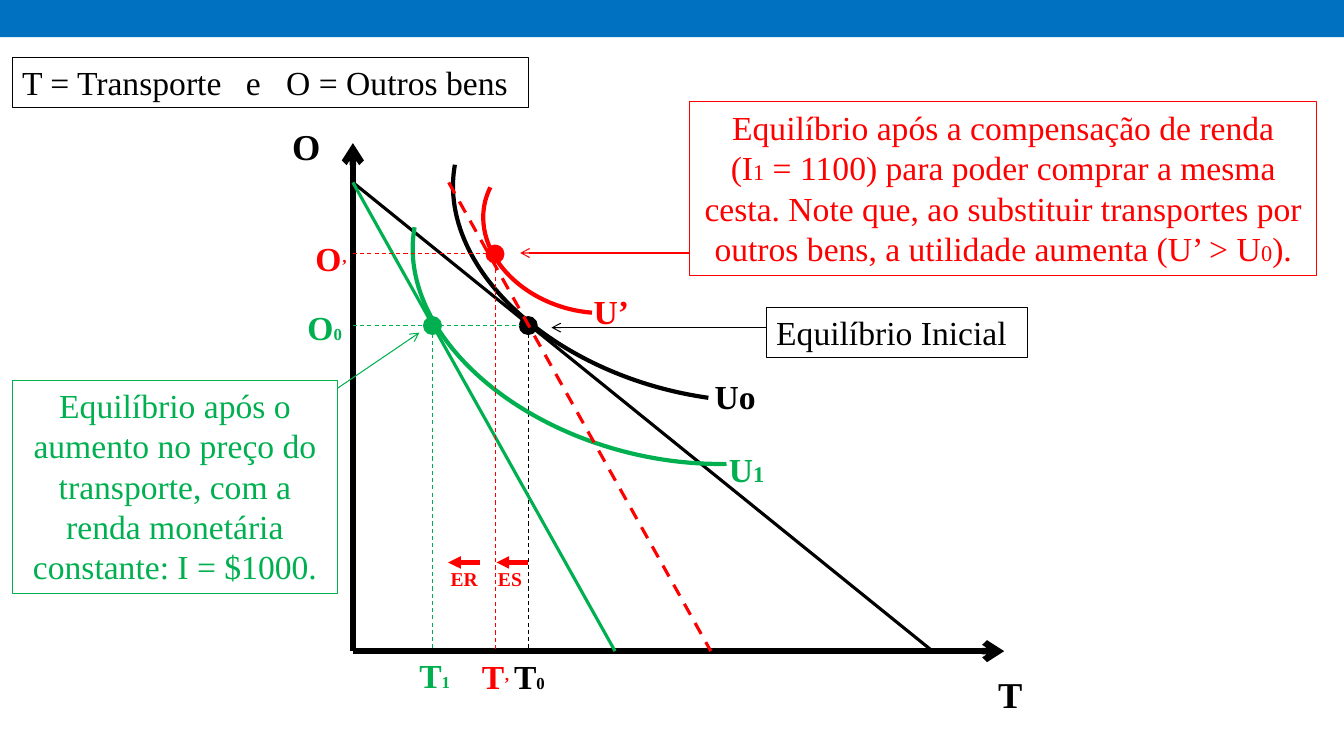
from dataclasses import dataclass
from typing import Any

from lxml import etree
from pptx import Presentation
from pptx import util as u
from pptx.dml.color import RGBColor
from pptx.enum import dml, shapes, text
from pptx.oxml.ns import qn

UNIT = 0.1
FONT = "Times New Roman"
BLUE, BLACK, GREEN, RED = "0070C0", "000000", "00B050", "FF0000"
PLOT = (35, 14.2, 64.6, 50.4)
INTERCEPT = 3.9
T_INITIAL, T_PRICE, T_COMPENSATED = 17.4, 7.9, 14.1
O_INITIAL, O_COMPENSATED = 18.1, 11


def grid(count):
    """Turn a count of grid cells into a length."""
    return u.Inches(count * UNIT)


def paint(target, color):
    """Apply a hex colour to a fill or a font."""
    if hasattr(target, "solid"):
        target.solid()
        target.fore_color.rgb = RGBColor.from_string(color)
    else:
        target.color.rgb = RGBColor.from_string(color)


@dataclass
class Region:
    """Draw parts of one colour, placed in grid cells from a box corner."""

    shapes: Any
    box: tuple
    color: str

    def place(self, x, y):
        """Give the slide position of a point in the region."""
        return grid(self.box[0] + x), grid(self.box[1] + y)

    def line(self, start, end, width=0.75, dashed=False, arrow=None):
        """Draw a straight line, dashed or with an arrowhead if asked."""
        connector = self.shapes.add_connector(
            shapes.MSO_CONNECTOR.STRAIGHT, *self.place(*start), *self.place(*end))
        paint(connector.line.fill, self.color)
        connector.line.width = u.Pt(width)
        if dashed:
            connector.line.dash_style = dml.MSO_LINE.DASH
        properties = connector._element.spPr
        if arrow:
            outline = properties.find(qn("a:ln"))
            etree.SubElement(outline, qn("a:tailEnd"), type=arrow)
        etree.SubElement(properties, qn("a:effectLst"))

    def outline(self, kind, corner, size, width, filled=False):
        """Add an outlined preset shape."""
        shape = self.shapes.add_shape(kind, *self.place(*corner), *map(grid, size))
        shape.shadow.inherit = False
        if filled:
            paint(shape.fill, self.color)
        else:
            shape.fill.background()
        paint(shape.line.fill, self.color)
        shape.line.width = u.Pt(width)
        return shape

    def curve(self, corner, size, start, end):
        """Draw an indifference curve as a turned arc."""
        arc = self.outline(shapes.MSO_SHAPE.ARC, corner, size, 3)
        arc.adjustments[0], arc.adjustments[1] = start, end
        arc.rotation = 194

    def equilibrium(self, x, y):
        """Mark a tangency point and drop its dashed line to the axis."""
        radius = 0.8
        self.outline(shapes.MSO_SHAPE.OVAL, (x - radius, y - radius),
                     (2 * radius, 2 * radius), 2, filled=True)
        self.line((x, y + radius), (x, self.box[3]), dashed=True)

    def set_text(self, shape, runs, bold=False, centered=False, tabs=()):
        """Fill a shape with one paragraph of (text, size) runs."""
        frame = shape.text_frame
        frame.word_wrap = True
        frame.auto_size = text.MSO_AUTO_SIZE.SHAPE_TO_FIT_TEXT
        frame.vertical_anchor = text.MSO_ANCHOR.TOP
        paragraph = frame.paragraphs[0]
        paragraph.alignment = text.PP_ALIGN.CENTER if centered else text.PP_ALIGN.LEFT
        if tabs:
            stops = etree.SubElement(paragraph._p.get_or_add_pPr(), qn("a:tabLst"))
            for tab in tabs:
                etree.SubElement(stops, qn("a:tab"), pos=str(grid(tab)), algn="l")
        for words, size in runs:
            if words == "\n":
                paragraph.add_line_break()
                continue
            run = paragraph.add_run()
            run.text = words
            run.font.name, run.font.size, run.font.bold = FONT, u.Pt(size), bold
            paint(run.font, self.color)

    def label(self, corner, *runs, size=(5.5, 4)):
        """Add a bold label."""
        shape = self.shapes.add_textbox(*self.place(*corner), *map(grid, size))
        self.set_text(shape, runs, bold=True)

    def note(self, corner, size, *runs, centered=False, tabs=()):
        """Add a framed note."""
        shape = self.outline(shapes.MSO_SHAPE.RECTANGLE, corner, size, 0.75)
        self.set_text(shape, runs, centered=centered, tabs=tabs)


def draw_header(slide, box):
    """Draw the top band and the legend of the two goods."""
    band = Region(slide.shapes, box, BLUE)
    shape = band.outline(shapes.MSO_SHAPE.RECTANGLE, (0, 0), (box[2], 3.7), 0, filled=True)
    shape.line.fill.background()
    Region(slide.shapes, box, BLACK).note(
        (1.2, 5.7), (51.2, 5), ("T = Transporte\te\tO = Outros bens", 24), tabs=(22.2, 26.2))


def draw_initial(slide, box):
    """Draw the axes and the initial equilibrium."""
    region = Region(slide.shapes, box, BLACK)
    width, base = box[2:]
    for end in ((0, 0), (width, base)):
        region.line((0, base), end, 4.5, arrow="arrow")
    region.label((63, 52), ("T", 26), size=(5.5, 5.4))
    region.label((-7, -2.4), ("O", 26), size=(5.5, 5.4))
    region.line((0, INTERCEPT), (57.5, base), 2.25)
    region.curve((9.5, -9.6), (51.9, 34.6), 153.98, 215.03)
    region.label((34.9, 22.6), ("Uo", 24), size=(7.1, 4))
    region.equilibrium(T_INITIAL, O_INITIAL)
    region.label((15, base), ("T", 24), ("0", 12))
    region.note((41, 16.3), (25.9, 5), ("Equilíbrio Inicial", 24))
    region.line((41, 18.3), (19.7, 18.3), arrow="arrow")


def draw_price_rise(slide, box):
    """Draw the equilibrium after the price of transport rises."""
    region = Region(slide.shapes.add_group_shape().shapes, box, GREEN)
    base = box[3]
    region.label((36.3, 29.8), ("U", 24), ("1", 16), size=(7.1, 5))
    region.label((5.6, base - 0.1), ("T", 24), ("1", 12))
    region.note((-33.8, 23.5), (32.3, 21.2),
                ("Equilíbrio após o aumento no preço do transporte, com a renda "
                 "monetária constante: I = $1000.", 24), centered=True)
    region.line((0, INTERCEPT), (26, base), 2.25)
    region.line((0, O_INITIAL), (T_INITIAL - 0.8, O_INITIAL), dashed=True)
    region.label((-5.5, 15.8), ("O", 24), ("0", 12))
    region.equilibrium(T_PRICE, O_INITIAL)
    region.curve((5.5, -3.4), (51.9, 34.6), 143.18, 215.03)
    region.line((-1.5, 24.3), (6.6, 18.8), arrow="arrow")


def draw_compensation(slide, box):
    """Draw the compensated equilibrium and the two effects."""
    region = Region(slide.shapes.add_group_shape().shapes, box, RED)
    base = box[3]
    region.line((9.5, INTERCEPT), (35.5, base), 2.25, dashed=True)
    region.curve((12.8, 0), (21.4, 16.7), 152.76, 4.75)
    region.equilibrium(T_COMPENSATED, O_COMPENSATED)
    region.label((22.9, 14.2), ("U’", 24), size=(7.1, 4))
    region.line((0, O_COMPENSATED), (T_COMPENSATED - 0.8, O_COMPENSATED), dashed=True)
    region.label((-4.7, 8.9), ("O", 24), ("’", 12))
    region.label((11.8, base), ("T", 24), ("’", 12), size=(6.1, 5))
    region.note((33.4, -4.1), (62.2, 17.2),
                ("Equilíbrio após a compensação de renda", 24), ("\n", 24),
                ("(I", 24), ("1", 16),
                (" = 1100) para poder comprar a mesma cesta. Note que, ao substituir "
                 "transportes por outros bens, a utilidade aumenta (U’ > U", 24),
                ("0", 16), (").", 24), centered=True)
    region.line((33.4, 10.9), (16.6, 10.9), arrow="arrow")
    for name, start, left in (("ES", T_INITIAL, 13.4), ("ER", 12.6, 8.7)):
        region.line((start, 41.6), (start - 3.15, 41.6), 3, arrow="triangle")
        region.label((left, 41.6), (name, 14), size=(5.5, 3.4))


def main():
    """Build the slide and save it."""
    presentation = Presentation()
    presentation.slide_width, presentation.slide_height = u.Inches(13.33), u.Inches(7.5)
    slide = presentation.slides.add_slide(presentation.slide_layouts[6])
    draw_header(slide, (0, 0, 133.3, 75))
    for draw in (draw_initial, draw_price_rise, draw_compensation):
        draw(slide, PLOT)
    presentation.save("out.pptx")


if __name__ == "__main__":
    main()
